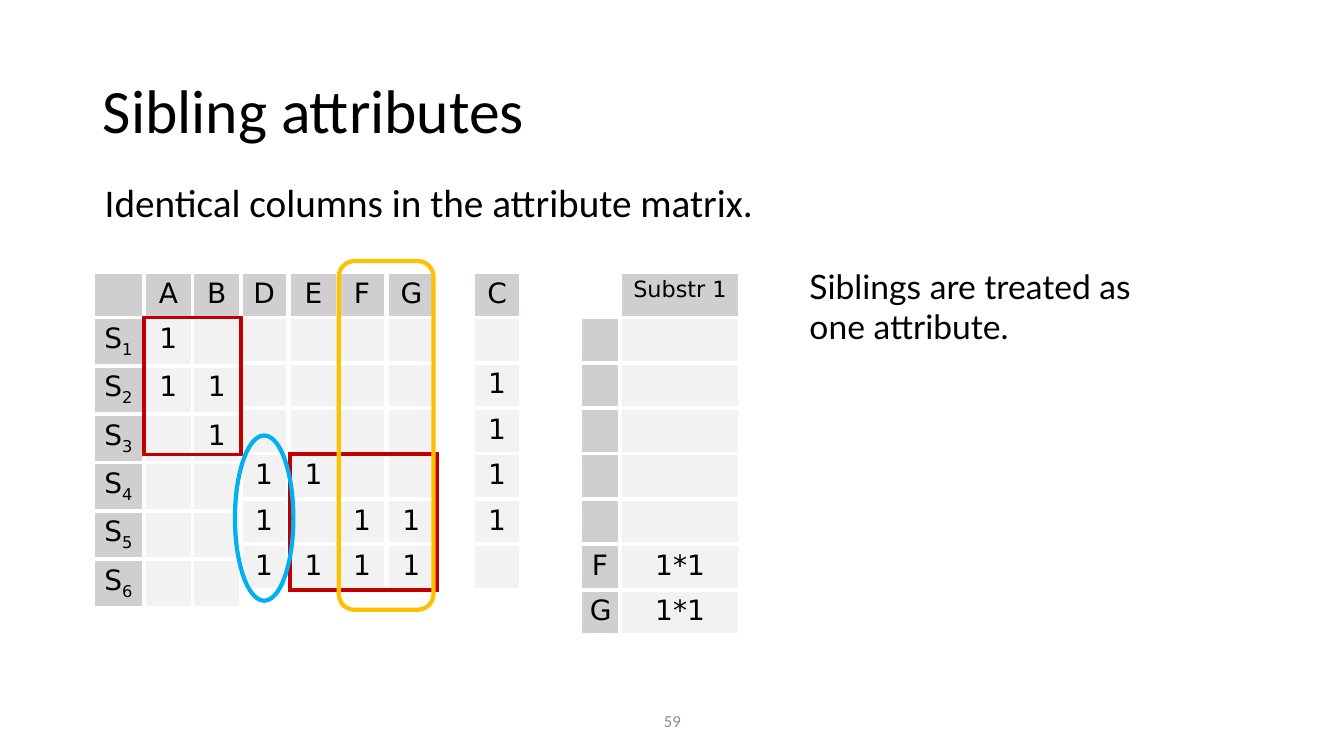
from dataclasses import dataclass
from typing import Optional

from lxml.etree import SubElement
from pptx import Presentation
from pptx.dml.color import RGBColor
from pptx.enum.shapes import MSO_SHAPE
from pptx.enum.text import MSO_ANCHOR, PP_ALIGN
from pptx.oxml import parse_xml
from pptx.oxml.ns import nsdecls, qn
from pptx.util import Inches, Pt

BLACK = RGBColor(0x00, 0x00, 0x00)
WHITE = RGBColor(0xFF, 0xFF, 0xFF)
PAGE_GREY = RGBColor(0x8C, 0x8C, 0x8C)
HEADER_GREY = RGBColor(0xD0, 0xCE, 0xCE)
CELL_GREY = RGBColor(0xF2, 0xF2, 0xF2)
RED = RGBColor(0xC0, 0x00, 0x00)
YELLOW = RGBColor(0xFF, 0xC0, 0x00)
BLUE = RGBColor(0x00, 0xB0, 0xF0)

MATRIX_TOP = 2.7
ROW_HEIGHT = 0.45
COLUMN_WIDTH = 0.48


@dataclass(frozen=True)
class Matrix:
    left: float
    widths: tuple[float, ...]
    rows: tuple[tuple[str, ...], ...]
    labelled: bool = False
    header_size: int = 20


@dataclass(frozen=True)
class Highlight:
    preset: MSO_SHAPE
    box: tuple[float, float, float, float]
    color: RGBColor
    weight: float
    filled: bool = False
    adjustment: Optional[float] = None


def attribute_column(letter: str, *marked: int) -> tuple[str, ...]:
    return (letter,) + tuple("1" if row in marked else "" for row in range(1, 7))


A = attribute_column("A", 1, 2)
B = attribute_column("B", 2, 3)
C = attribute_column("C", 2, 3, 4, 5)
D = attribute_column("D", 4, 5, 6)
E = attribute_column("E", 4, 6)
F = attribute_column("F", 5, 6)
G = attribute_column("G", 5, 6)
STRINGS = ("",) + tuple(f"S_{number}" for number in range(1, 7))
SUBSTRING_ROWS = (("", "Substr 1"),) + (("", ""),) * 5 + (("F", "1*1"), ("G", "1*1"))

MATRICES = (
    Matrix(2.87, (COLUMN_WIDTH,) * 2, tuple(zip(E, F))),
    Matrix(2.38, (COLUMN_WIDTH,), tuple(zip(D))),
    Matrix(0.92, (0.51, COLUMN_WIDTH, COLUMN_WIDTH), tuple(zip(STRINGS, A, B)), labelled=True),
    Matrix(4.69, (COLUMN_WIDTH,), tuple(zip(C))),
    Matrix(3.84, (COLUMN_WIDTH,), tuple(zip(G))),
    Matrix(5.75, (0.4, 1.19), SUBSTRING_ROWS, labelled=True, header_size=16),
)

HIGHLIGHTS = (
    Highlight(MSO_SHAPE.FRAME, (1.42, 3.14, 0.98, 1.38), RED, 1, True, 0.021),
    Highlight(MSO_SHAPE.FRAME, (2.86, 4.49, 1.49, 1.38), RED, 1, True, 0.021),
    Highlight(MSO_SHAPE.ROUNDED_RECTANGLE, (3.36, 2.59, 0.94, 3.46), YELLOW, 3),
    Highlight(MSO_SHAPE.OVAL, (2.33, 4.32, 0.58, 1.64), BLUE, 3),
)


def write(frame, text: str, *, size: float, font: str = "Calibri", color: RGBColor = BLACK,
          align: PP_ALIGN = PP_ALIGN.LEFT, line_spacing: Optional[float] = None,
          space_before: float = 0) -> None:
    paragraph = frame.paragraphs[0]
    paragraph.alignment = align
    paragraph.space_before = Pt(space_before)
    if line_spacing is not None:
        paragraph.line_spacing = line_spacing
    base, _, subscript = text.partition("_")
    for part in filter(None, (base, subscript)):
        run = paragraph.add_run()
        run.text = part
        run.font.size = Pt(size)
        run.font.name = font
        run.font.bold = False
        run.font.color.rgb = color
        if part is subscript:
            run._r.get_or_add_rPr().set("baseline", "-25000")


def add_text(slide, box: tuple[float, float, float, float], text: str,
             anchor: MSO_ANCHOR = MSO_ANCHOR.TOP, **text_format) -> None:
    frame = slide.shapes.add_textbox(*map(Inches, box)).text_frame
    frame.word_wrap = True
    frame.vertical_anchor = anchor
    write(frame, text, **text_format)


def add_borders(cell) -> None:
    properties = cell._tc.get_or_add_tcPr()
    for index, side in enumerate("LRTB"):
        border = parse_xml(f'<a:ln{side} {nsdecls("a")} w="{Pt(3)}"/>')
        fill = SubElement(border, qn("a:solidFill"))
        SubElement(fill, qn("a:srgbClr"), val=str(WHITE))
        properties.insert(index, border)


def add_matrix(slide, matrix: Matrix) -> None:
    row_count = len(matrix.rows)
    table = slide.shapes.add_table(
        row_count, len(matrix.widths), Inches(matrix.left), Inches(MATRIX_TOP),
        Inches(sum(matrix.widths)), Inches(ROW_HEIGHT * row_count)).table
    table.first_row = False
    table.horz_banding = False
    for column, width in zip(table.columns, matrix.widths):
        column.width = Inches(width)
    for row_index, values in enumerate(matrix.rows):
        table.rows[row_index].height = Inches(ROW_HEIGHT)
        for column_index, value in enumerate(values):
            cell = table.cell(row_index, column_index)
            is_label = row_index == 0 or (matrix.labelled and column_index == 0)
            cell.fill.solid()
            cell.fill.fore_color.rgb = HEADER_GREY if is_label else CELL_GREY
            add_borders(cell)
            if value:
                write(cell.text_frame, value, font="DejaVu Sans", align=PP_ALIGN.CENTER,
                      size=20 if row_index else matrix.header_size)
    if matrix.rows is SUBSTRING_ROWS:
        table.cell(0, 0).fill.fore_color.rgb = WHITE


def add_highlight(slide, highlight: Highlight) -> None:
    shape = slide.shapes.add_shape(highlight.preset, *map(Inches, highlight.box))
    shape.shadow.inherit = False
    shape.line.color.rgb = highlight.color
    shape.line.width = Pt(highlight.weight)
    if highlight.filled:
        shape.fill.solid()
        shape.fill.fore_color.rgb = highlight.color
    else:
        shape.fill.background()
    if highlight.adjustment is not None:
        shape.adjustments[0] = highlight.adjustment


def main() -> None:
    presentation = Presentation()
    presentation.slide_width = Inches(13.33)
    presentation.slide_height = Inches(7.5)
    slide = presentation.slides.add_slide(presentation.slide_layouts[5])

    title = slide.shapes.title
    title.left, title.top, title.width, title.height = map(Inches, (0.92, 0.4, 11.5, 1.45))
    title.text_frame.vertical_anchor = MSO_ANCHOR.MIDDLE
    write(title.text_frame, "Sibling attributes", size=44, line_spacing=0.9)

    add_text(slide, (5.17, 6.95, 3, 0.4), "59", MSO_ANCHOR.MIDDLE,
             size=12, color=PAGE_GREY, align=PP_ALIGN.CENTER)
    add_text(slide, (0.94, 1.77, 11.48, 1.45), "Identical columns in the attribute matrix.",
             size=28, line_spacing=0.9, space_before=10)
    for matrix in MATRICES:
        add_matrix(slide, matrix)
    for highlight in HIGHLIGHTS:
        add_highlight(slide, highlight)
    add_text(slide, (7.93, 2.59, 3.49, 0.91), "Siblings are treated as one attribute.",
             size=24, font="Lato")
    presentation.save("out.pptx")


if __name__ == "__main__":
    main()
